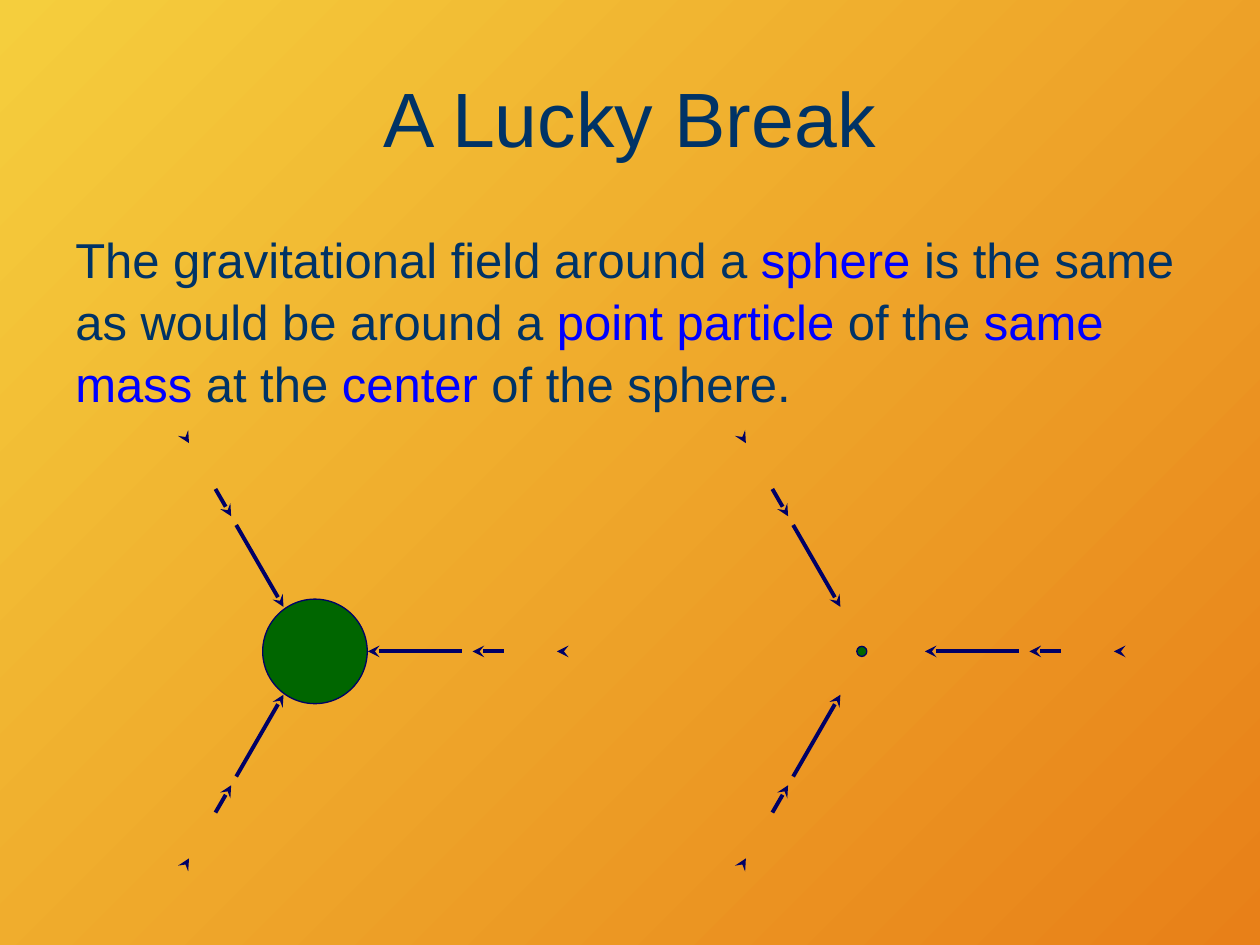
"""Build a slide comparing the gravitational field of a sphere and a point particle."""
import math

import pptx
import pptx.dml.color
import pptx.enum.shapes
import pptx.enum.text
import pptx.oxml
import pptx.util
from pptx.util import Inches

NAVY, TEXT, BLUE, GREEN = "000066", "003366", "0000FF", "006600"


def color(value):
    return pptx.dml.color.RGBColor.from_string(value)


def add_text(runs, left, top, width, height, size, align, anchor, line_spacing=1.0):
    box = slide.shapes.add_textbox(Inches(left), Inches(top), Inches(width), Inches(height))
    frame = box.text_frame
    frame.word_wrap = True
    frame.vertical_anchor = anchor
    paragraph = frame.paragraphs[0]
    paragraph.alignment = align
    paragraph.line_spacing = line_spacing
    for text, run_color in runs:
        run = paragraph.add_run()
        run.text = text
        run.font.name = "Arial"
        run.font.size = pptx.util.Pt(size)
        run.font.color.rgb = color(run_color)


presentation = pptx.Presentation()
presentation.slide_width = Inches(10)
presentation.slide_height = Inches(7.5)
slide = presentation.slides.add_slide(presentation.slide_layouts[6])

background = slide.background.fill
background.gradient()
background.gradient_angle = 315
for stop, stop_color in zip(background.gradient_stops, ["F5CE3D", "E88018"]):
    stop.color.rgb = color(stop_color)

align = pptx.enum.text.PP_ALIGN
anchor = pptx.enum.text.MSO_ANCHOR
add_text([("A Lucky Break", TEXT)], left=0.5, top=0.3, width=9, height=1.25,
         size=44, align=align.CENTER, anchor=anchor.MIDDLE)
statement = [
    ("The gravitational field around a ", TEXT), ("sphere", BLUE),
    (" is the same as would be around a ", TEXT), ("point particle", BLUE),
    (" of the ", TEXT), ("same mass", BLUE), (" at the ", TEXT),
    ("center", BLUE), (" of the sphere.", TEXT),
]
add_text(statement, left=0.5, top=1.75, width=9, height=1.58,
         size=28, align=align.LEFT, anchor=anchor.TOP, line_spacing=1.05)

rays = [(0, 2.5, 5.17), (-120, 2.46, 5.18), (120, 2.46, 5.15)]
arrow_radii = [(0.42, 1.17), (1.25, 1.5), (1.92, 2)]
masses = [(0, 2.5, 0.83), (4.42, 6.84, 0.08)]

for field_offset, mass_x, diameter in masses:
    mass = slide.shapes.add_shape(
        pptx.enum.shapes.MSO_SHAPE.OVAL,
        Inches(mass_x - diameter / 2), Inches(5.17 - diameter / 2),
        Inches(diameter), Inches(diameter))
    mass.shadow.inherit = False
    mass.fill.solid()
    mass.fill.fore_color.rgb = color(GREEN)
    mass.line.color.rgb = color(NAVY)
    mass.line.width = pptx.util.Pt(0.75)

    for degrees, origin_x, origin_y in rays:
        cosine, sine = math.cos(math.radians(degrees)), math.sin(math.radians(degrees))
        for inner, outer in arrow_radii:
            arrow = slide.shapes.add_connector(
                pptx.enum.shapes.MSO_CONNECTOR.STRAIGHT,
                Inches(field_offset + origin_x + inner * cosine),
                Inches(origin_y + inner * sine),
                Inches(field_offset + origin_x + outer * cosine),
                Inches(origin_y + outer * sine))
            arrow.line.color.rgb = color(NAVY)
            arrow.line.width = pptx.util.Pt(2.25)
            head = pptx.oxml.parse_xml(
                '<a:headEnd xmlns:a="http://schemas.openxmlformats.org/drawingml/2006/main"'
                ' type="stealth"/>')
            arrow.line._get_or_add_ln().append(head)
            properties = arrow._element.spPr
            properties.append(properties.makeelement(pptx.oxml.ns.qn("a:effectLst"), {}))

presentation.save("out.pptx")
